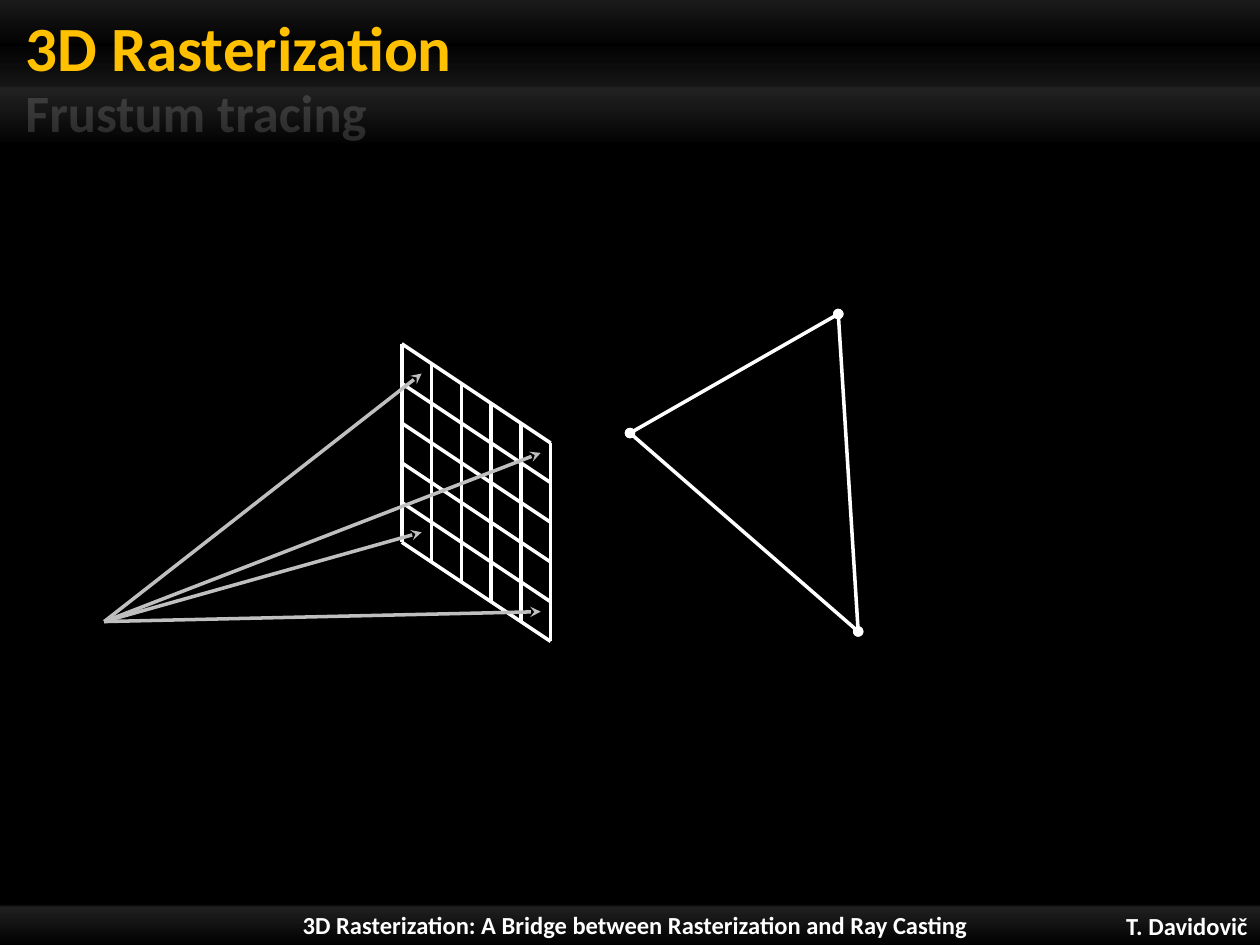
from itertools import combinations, product

from lxml.etree import SubElement
from pptx import Presentation
from pptx.dml.color import RGBColor
from pptx.enum.shapes import MSO_CONNECTOR, MSO_SHAPE
from pptx.enum.text import MSO_ANCHOR, PP_ALIGN
from pptx.oxml.ns import qn
from pptx.util import Cm, Pt

WHITE, GOLD, SILVER = "FFFFFF", "FFC000", "BFBFBF"


def colour(code):
    """Turn a hex string into a colour."""
    return RGBColor.from_string(code)


class Stage:
    """Holds the style and the current slide, and draws its elements."""

    font_name = "Calibri"
    line_width = Pt(2)

    def __init__(self, page):
        """Start on a black page."""
        self.page = page
        page.background.fill.solid()
        page.background.fill.fore_color.rgb = colour("000000")

    def fade(self, fill, element, stops):
        """Fill with white that changes in opacity from top to bottom."""
        fill.gradient()
        gradient = next(element.iter(qn("a:gradFill")))
        gradient.find(qn("a:lin")).set("ang", "5400000")
        stop_list = gradient.find(qn("a:gsLst"))
        for stop in list(stop_list):
            stop_list.remove(stop)
        for position, opacity in stops:
            stop = SubElement(stop_list, qn("a:gs"), pos=str(position * 1000))
            shade = SubElement(stop, qn("a:srgbClr"), val=WHITE)
            SubElement(shade, qn("a:alpha"), val=str(opacity * 1000))

    def band(self, top, height, stops):
        """Draw a glossy band across the page."""
        band = self.page.shapes.add_shape(
            MSO_SHAPE.RECTANGLE, 0, Cm(top), Cm(25.4), Cm(height))
        band.shadow.inherit = False
        band.line.fill.background()
        self.fade(band.fill, band._element, stops)

    def text(self, words, place, size, code=WHITE, align=PP_ALIGN.LEFT,
             anchor=MSO_ANCHOR.MIDDLE, insets=(0.25, 0.13), stops=None):
        """Write one bold paragraph in a box."""
        box = self.page.shapes.add_textbox(*map(Cm, place))
        frame = box.text_frame
        frame.word_wrap = True
        frame.vertical_anchor = anchor
        frame.margin_left, frame.margin_right = Cm(insets[0]), Cm(0.25)
        frame.margin_top = frame.margin_bottom = Cm(insets[1])
        para = frame.paragraphs[0]
        para.text = words
        para.alignment = align
        para.font.name = self.font_name
        para.font.size = Pt(size)
        para.font.bold = True
        if stops:
            self.fade(para.font.fill, para._p, stops)
        else:
            para.font.color.rgb = colour(code)

    def line(self, start, end, code=WHITE, head=None, tail=None):
        """Draw a straight line with optional end marks."""
        line = self.page.shapes.add_connector(
            MSO_CONNECTOR.STRAIGHT, *map(Cm, (*start, *end)))
        line.line.color.rgb = colour(code)
        line.line.width = self.line_width
        outline = line.line._get_or_add_ln()
        for tag, mark in (("a:headEnd", head), ("a:tailEnd", tail)):
            if mark:
                SubElement(outline, qn(tag), type=mark)
        SubElement(line._element.spPr, qn("a:effectLst"))


def grid_point(column, row):
    """Give the place of a point on the slanted image plane."""
    return 8.1 + 0.6 * column, 6.93 + 0.4 * column + 0.8 * row


def main():
    """Build the slide."""
    deck = Presentation()
    deck.slide_width, deck.slide_height = Cm(25.4), Cm(19.05)
    stage = Stage(deck.slides.add_slide(deck.slide_layouts[6]))

    stage.band(18.19, 0.86, [(5, 0), (10, 8), (11, 13), (100, 0)])
    stage.band(0, 2.9, [(0, 10), (31, 0), (60, 8), (61, 13), (100, 0)])
    stage.text("T. Davidovič", (20.7, 18.26, 4.7, 0.79), 14, align=PP_ALIGN.RIGHT)
    stage.text("3D Rasterization: A Bridge between Rasterization and Ray Casting",
               (3.56, 18.21, 18.49, 0.86), 14, align=PP_ALIGN.CENTER)
    stage.text("3D Rasterization", (0, 0, 20.9, 1.7), 36, GOLD,
               anchor=MSO_ANCHOR.BOTTOM, insets=(0.51, 0))
    stage.text("Frustum tracing", (0, 1.65, 17.04, 1.19), 30,
               insets=(0.51, 0), stops=[(0, 15), (75, 100)])

    cells = 5
    for step in range(cells + 1):
        stage.line(grid_point(step, 0), grid_point(step, cells))
        stage.line(grid_point(0, step), grid_point(cells, step))

    triangle = [(16.9, 6.33), (12.7, 8.73), (17.3, 12.73)]
    for start, end in combinations(triangle, 2):
        stage.line(start, end, head="oval", tail="oval")

    camera = (2.1, 12.53)
    for column, row in product((0, cells - 1), repeat=2):
        left, top = grid_point(column, row)
        stage.line(camera, (left + 0.4, top + 0.6), SILVER, tail="stealth")

    deck.save("out.pptx")


if __name__ == "__main__":
    main()
